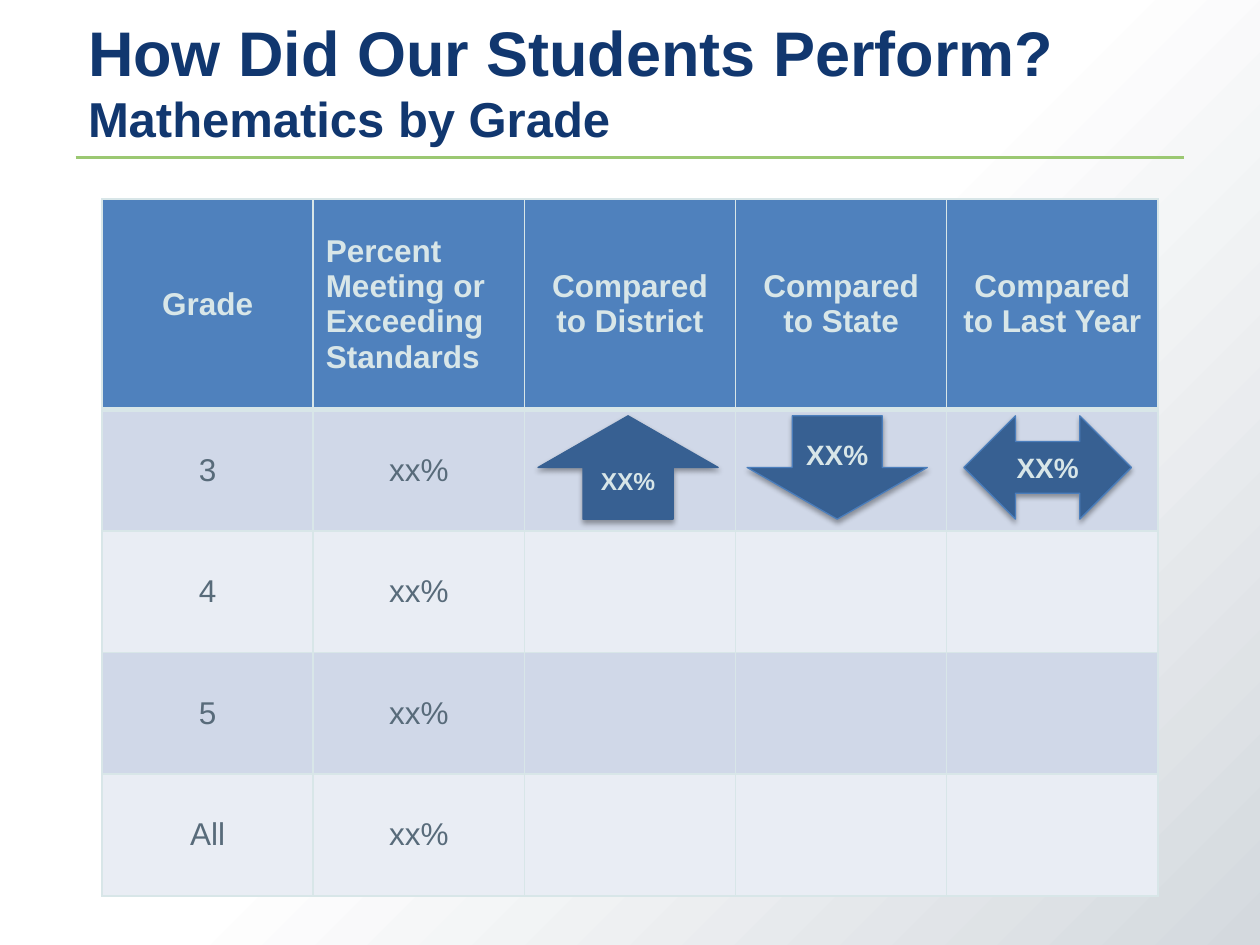
from lxml.etree import SubElement
from pptx import Presentation
from pptx.dml.color import RGBColor
from pptx.enum.shapes import MSO_CONNECTOR, MSO_SHAPE
from pptx.enum.text import MSO_ANCHOR, PP_ALIGN
from pptx.oxml import parse_xml
from pptx.oxml.ns import nsdecls, qn
from pptx.util import Inches, Pt

NAVY, GREEN, PALE, SLATE = "11376F", "9BC872", "D8E6E8", "586B7A"
HEADER_BLUE, BANDS = "4F81BD", ("D0D8E8", "E9EDF4")
ARROW_BLUE, ARROW_EDGE = "376092", "4B7EBC"
HEADINGS = ["Grade", "Percent Meeting or Exceeding Standards", "Compared to District",
            "Compared to State", "Compared to Last Year"]
GRADES = ["3", "4", "5", "All"]


def rgb(hex_color):
    return RGBColor.from_string(hex_color)


class SlideBuilder:
    font_name = "Arial"

    def __init__(self, slide):
        self.slide = slide

    def style(self, run, size, color, bold=False):
        run.font.name = self.font_name
        run.font.size = Pt(size)
        run.font.bold = bold
        run.font.color.rgb = rgb(color)

    def background(self, start, end):
        fill = self.slide.background.fill
        fill.gradient()
        fill.gradient_angle = 315
        for stop, color, position in zip(fill.gradient_stops, (start, end), (0.5, 1)):
            stop.color.rgb = rgb(color)
            stop.position = position

    def rule(self, left, right, y, color, width):
        rule = self.slide.shapes.add_connector(
            MSO_CONNECTOR.STRAIGHT, Inches(left), Inches(y), Inches(right), Inches(y))
        rule.line.color.rgb = rgb(color)
        rule.line.width = Pt(width)
        SubElement(rule._element.spPr, qn("a:effectLst"))

    def title(self, box, lines, sizes, color):
        """Write one paragraph whose lines differ in size."""
        frame = self.slide.shapes.add_textbox(*map(Inches, box)).text_frame
        frame.word_wrap = True
        frame.vertical_anchor = MSO_ANCHOR.BOTTOM
        heading = frame.paragraphs[0]
        heading.text = "\v".join(lines)
        for run, size in zip(heading.runs, sizes):
            self.style(run, size, color, bold=True)

    def borders(self, cell, color, bottom):
        for side in "LRTB":
            width = Pt(bottom if side == "B" else 1)
            cell._tc.get_or_add_tcPr().append(parse_xml(
                f'<a:ln{side} {nsdecls("a")} w="{width}"><a:solidFill>'
                f'<a:srgbClr val="{color}"/></a:solidFill></a:ln{side}>'))

    def cell(self, cell, text, fill, color, header=False, centered=True):
        self.borders(cell, PALE, 3 if header else 1)
        cell.fill.solid()
        cell.fill.fore_color.rgb = rgb(fill)
        cell.vertical_anchor = MSO_ANCHOR.MIDDLE
        if not text:
            return
        entry = cell.text_frame.paragraphs[0]
        entry.text = text
        if centered:
            entry.alignment = PP_ALIGN.CENTER
            entry.space_before = entry.space_after = Pt(18)
        self.style(entry.runs[0], 18, color, bold=header)

    def table(self, box, rows, header_height, row_height):
        table = self.slide.shapes.add_table(
            len(rows), len(rows[0]), *map(Inches, box)).table
        for r, texts in enumerate(rows):
            header = r == 0
            table.rows[r].height = Inches(header_height if header else row_height)
            fill = HEADER_BLUE if header else BANDS[(r - 1) % 2]
            for c, text in enumerate(texts):
                self.cell(table.cell(r, c), text, fill, PALE if header else SLATE,
                          header, centered=not (header and c == 1))

    def arrow(self, kind, left, width, edge, size):
        arrow = self.slide.shapes.add_shape(
            kind, Inches(left), Inches(3.3), Inches(width), Inches(0.82))
        arrow.fill.solid()
        arrow.fill.fore_color.rgb = rgb(ARROW_BLUE)
        arrow.line.color.rgb = rgb(edge)
        arrow.line.width = Pt(0.75)
        arrow._element.spPr.append(parse_xml(
            f'<a:effectLst {nsdecls("a")}><a:outerShdw blurRad="{Pt(3.1)}" '
            f'dist="{Pt(1.8)}" dir="5400000" rotWithShape="0"><a:srgbClr val="000000">'
            '<a:alpha val="35000"/></a:srgbClr></a:outerShdw></a:effectLst>'))
        arrow.text_frame.vertical_anchor = MSO_ANCHOR.MIDDLE
        change = arrow.text_frame.paragraphs[0]
        change.text = "XX%"
        change.alignment = PP_ALIGN.CENTER
        self.style(change.runs[0], size, PALE, bold=True)


def main():
    deck = Presentation()
    deck.slide_width, deck.slide_height = Inches(10), Inches(7.5)
    builder = SlideBuilder(deck.slides.add_slide(deck.slide_layouts[6]))

    builder.background("FFFFFF", "D4D9DE")
    builder.rule(0.6, 9.4, 1.25, GREEN, 2)
    builder.title((0.6, 0.6, 8.81, 0.62),
                  ["How Did Our Students Perform?", "Mathematics by Grade"], (36, 28), NAVY)
    results = [[grade, "xx%", "", "", ""] for grade in GRADES]
    builder.table((0.81, 1.58, 8.38, 5.53), [HEADINGS] + results, 1.67, 0.965)
    builder.arrow(MSO_SHAPE.UP_ARROW, 4.27, 1.43, ARROW_BLUE, 14)
    builder.arrow(MSO_SHAPE.DOWN_ARROW, 5.93, 1.43, ARROW_EDGE, 16)
    builder.arrow(MSO_SHAPE.LEFT_RIGHT_ARROW, 7.65, 1.33, ARROW_EDGE, 16)

    deck.save("out.pptx")


if __name__ == "__main__":
    main()
